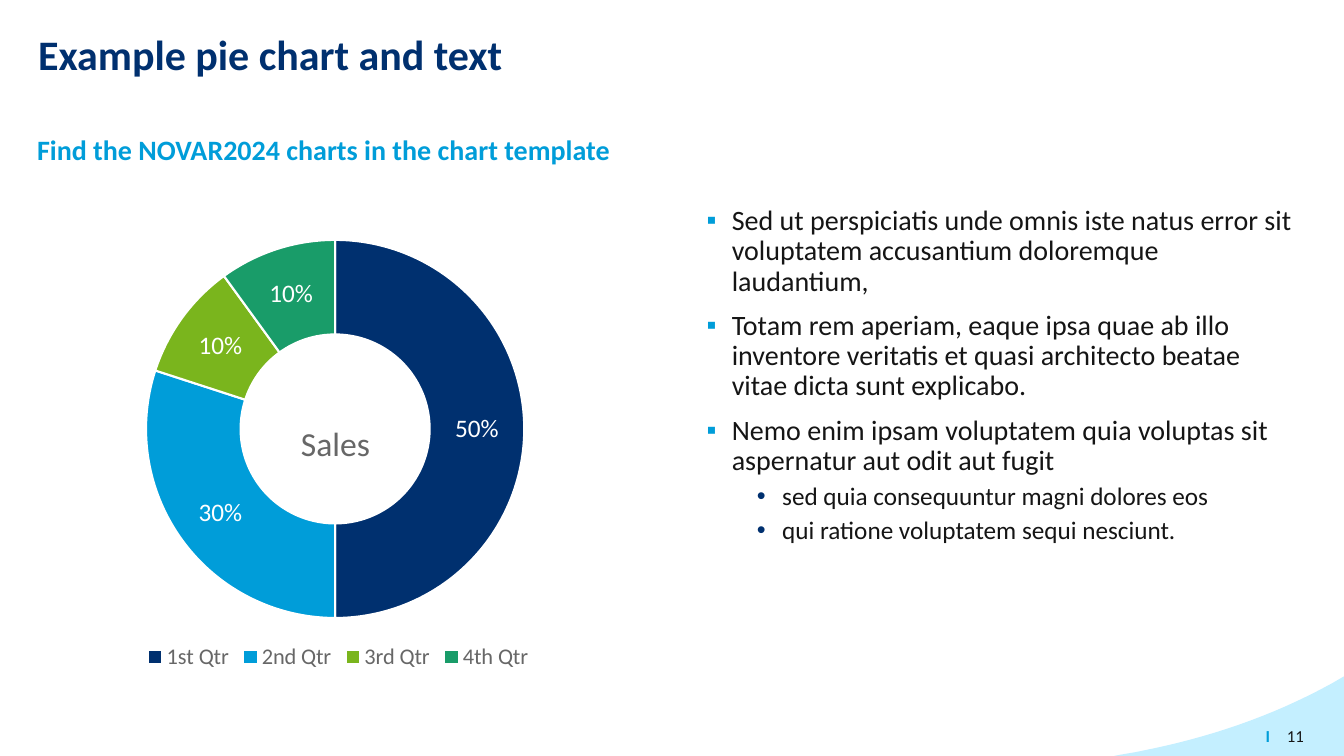
from dataclasses import dataclass

from lxml.etree import SubElement
from pptx import Presentation
from pptx.chart.chart import Chart
from pptx.chart.data import CategoryChartData
from pptx.dml.color import RGBColor
from pptx.enum.chart import XL_CHART_TYPE as ChartType, XL_LEGEND_POSITION as LegendPosition
from pptx.enum.text import MSO_ANCHOR as Anchor, PP_ALIGN as Align
from pptx.oxml import parse_xml
from pptx.oxml.ns import nsdecls, qn
from pptx.slide import Slide
from pptx.text.text import Font
from pptx.util import Inches, Pt

NAVY = RGBColor(0x00, 0x30, 0x6F)
BLUE = RGBColor(0x00, 0x9D, 0xD9)
GREEN = RGBColor(0x7A, 0xB5, 0x1D)
TEAL = RGBColor(0x19, 0x9C, 0x69)
PALE = RGBColor(0xC4, 0xEF, 0xFF)
INK = RGBColor(0x15, 0x15, 0x15)
GREY = RGBColor(0x67, 0x67, 0x67)
WHITE = RGBColor(0xFF, 0xFF, 0xFF)
FONT = "Calibri"
Point = tuple[float, float]


@dataclass(frozen=True)
class Level:
    size: float
    color: RGBColor = INK
    bold: bool = False
    before: float = 0
    spacing: float = 0.9
    align: Align = Align.LEFT
    bullet: str = ""
    bullet_color: RGBColor = BLUE
    margin: float = 0


@dataclass(frozen=True)
class Line:
    text: str
    level: Level


@dataclass(frozen=True)
class TextBlock:
    left: float
    top: float
    width: float
    height: float
    lines: tuple[Line, ...]
    anchor: Anchor = Anchor.TOP


@dataclass(frozen=True)
class Quarter:
    name: str
    share: float
    color: RGBColor


TITLE = Level(30, NAVY, True)
SUBTITLE = Level(20, BLUE, True)
MAIN = Level(20, before=10, bullet="▪", margin=0.25)
SUB = Level(18, before=5, bullet="•", bullet_color=NAVY, margin=0.75)
MARK = Level(12, BLUE, True, spacing=1, align=Align.CENTER)
NUMBER = Level(12, spacing=1, align=Align.RIGHT)

BLOCKS = (
    TextBlock(12.39, 7.1, 0.37, 0.4, (Line("I", MARK),), Anchor.MIDDLE),
    TextBlock(0.28, 0.29, 11.03, 1, (Line("Example pie chart and text", TITLE),)),
    TextBlock(10.03, 7.1, 3, 0.4, (Line("11", NUMBER),), Anchor.MIDDLE),
    TextBlock(0.27, 1.3, 12.7, 0.69, (
        Line("Find the NOVAR2024 charts in the chart template", SUBTITLE),
    )),
    TextBlock(6.91, 2, 6.1, 4.7, (
        Line("Sed ut perspiciatis unde omnis iste natus error sit voluptatem "
             "accusantium doloremque laudantium,", MAIN),
        Line("Totam rem aperiam, eaque ipsa quae ab illo inventore veritatis et "
             "quasi architecto beatae vitae dicta sunt explicabo.", MAIN),
        Line("Nemo enim ipsam voluptatem quia voluptas sit aspernatur aut odit "
             "aut fugit", MAIN),
        Line("sed quia consequuntur magni dolores eos", SUB),
        Line("qui ratione voluptatem sequi nesciunt.", SUB),
    )),
)

QUARTERS = (
    Quarter("1st Qtr", 0.5, NAVY),
    Quarter("2nd Qtr", 0.3, BLUE),
    Quarter("3rd Qtr", 0.1, GREEN),
    Quarter("4th Qtr", 0.1, TEAL),
)


def set_font(font: Font, size: float, color: RGBColor, bold: bool = False) -> None:
    font.name = FONT
    font.size = Pt(size)
    font.bold = bold
    font.color.rgb = color


def add_text(page: Slide, block: TextBlock) -> None:
    box = page.shapes.add_textbox(
        Inches(block.left), Inches(block.top), Inches(block.width), Inches(block.height))
    frame = box.text_frame
    frame.word_wrap = True
    frame.vertical_anchor = block.anchor
    for index, line in enumerate(block.lines):
        level = line.level
        para = frame.add_paragraph() if index else frame.paragraphs[0]
        para.text = line.text
        para.alignment = level.align
        para.line_spacing = level.spacing
        para.space_before = Pt(level.before if index else 0)
        if level.bullet:
            props = para._p.get_or_add_pPr()
            props.set("marL", str(Inches(level.margin)))
            props.set("indent", str(Inches(-0.25)))
            tint = SubElement(props, qn("a:buClr"))
            SubElement(tint, qn("a:srgbClr"), val=str(level.bullet_color))
            SubElement(props, qn("a:buFont"), typeface="Arial")
            SubElement(props, qn("a:buChar"), char=level.bullet)
        set_font(para.font, level.size, level.color, level.bold)


def curve(start: Point, first: Point, second: Point, end: Point) -> list[Point]:
    steps = 16
    points = []
    for step in range(1, steps + 1):
        t = step / steps
        weights = ((1 - t) ** 3, 3 * t * (1 - t) ** 2, 3 * t ** 2 * (1 - t), t ** 3)
        corners = (start, first, second, end)
        points.append((sum(w * x for w, (x, _) in zip(weights, corners)),
                       sum(w * y for w, (_, y) in zip(weights, corners))))
    return points


def add_wave(page: Slide) -> None:
    foot, bend, crest = (11.05, 7.5), (11.32, 7.45), (13.21, 6.78)
    outline = [(13.33, 7.5), (11.03, 7.5), foot,
               *curve(foot, (11.14, 7.48), (11.23, 7.47), bend),
               *curve(bend, (11.98, 7.32), (12.61, 7.11), crest)]
    builder = page.shapes.build_freeform(Inches(13.33), Inches(6.71))
    builder.add_line_segments([(Inches(x), Inches(y)) for x, y in outline])
    wave = builder.convert_to_shape()
    wave.shadow.inherit = False
    wave.fill.solid()
    wave.fill.fore_color.rgb = PALE
    wave.line.fill.background()


def place(parent, index: int, target: str = "", **fractions: float) -> None:
    for old in parent.findall(qn("c:layout")):
        parent.remove(old)
    layout = parse_xml(f"<c:layout {nsdecls('c')}><c:manualLayout/></c:layout>")
    if target:
        SubElement(layout[0], qn("c:layoutTarget"), val=target)
    for axis in ("x", "y"):
        SubElement(layout[0], qn(f"c:{axis}Mode"), val="edge")
    for name, value in fractions.items():
        SubElement(layout[0], qn(f"c:{name}"), val=str(value))
    parent.insert(index, layout)


def style_chart(chart: Chart) -> None:
    set_font(chart.font, 10, INK)
    chart.has_title = True
    heading = chart.chart_title.text_frame
    heading.text = "Sales"
    set_font(heading.paragraphs[0].font, 24, GREY)
    place(chart.chart_title._element, 1, x=0.43, y=0.45)
    chart.has_legend = True
    chart.legend.position = LegendPosition.BOTTOM
    chart.legend.include_in_layout = False
    set_font(chart.legend.font, 16, GREY)

    plot = chart.plots[0]
    plot.vary_by_categories = True
    plot._element.find(qn("c:holeSize")).set("val", "57")
    place(plot._element.getparent(), 0, "inner", x=0.19, y=0.08, w=0.61, h=0.8)
    plot.has_data_labels = True
    labels = plot.data_labels
    labels.show_value = True
    labels.show_percentage = False
    labels.number_format = "0%"
    labels.number_format_is_linked = False
    set_font(labels.font, 18, WHITE)
    for index, quarter in enumerate(QUARTERS):
        slice_format = plot.series[0].points[index].format
        slice_format.fill.solid()
        slice_format.fill.fore_color.rgb = quarter.color
        slice_format.line.color.rgb = WHITE
        slice_format.line.width = Pt(1.5)


def main() -> None:
    deck = Presentation()
    deck.slide_width, deck.slide_height = Inches(13.33), Inches(7.5)
    page = deck.slides.add_slide(deck.slide_layouts[6])
    add_wave(page)
    for block in BLOCKS:
        add_text(page, block)
    data = CategoryChartData(number_format="0%")
    data.categories = [quarter.name for quarter in QUARTERS]
    data.add_series("Sales", [quarter.share for quarter in QUARTERS])
    style_chart(page.shapes.add_chart(
        ChartType.DOUGHNUT, Inches(0.28), Inches(2), Inches(6.15), Inches(4.7), data).chart)
    deck.save("out.pptx")


if __name__ == "__main__":
    main()
